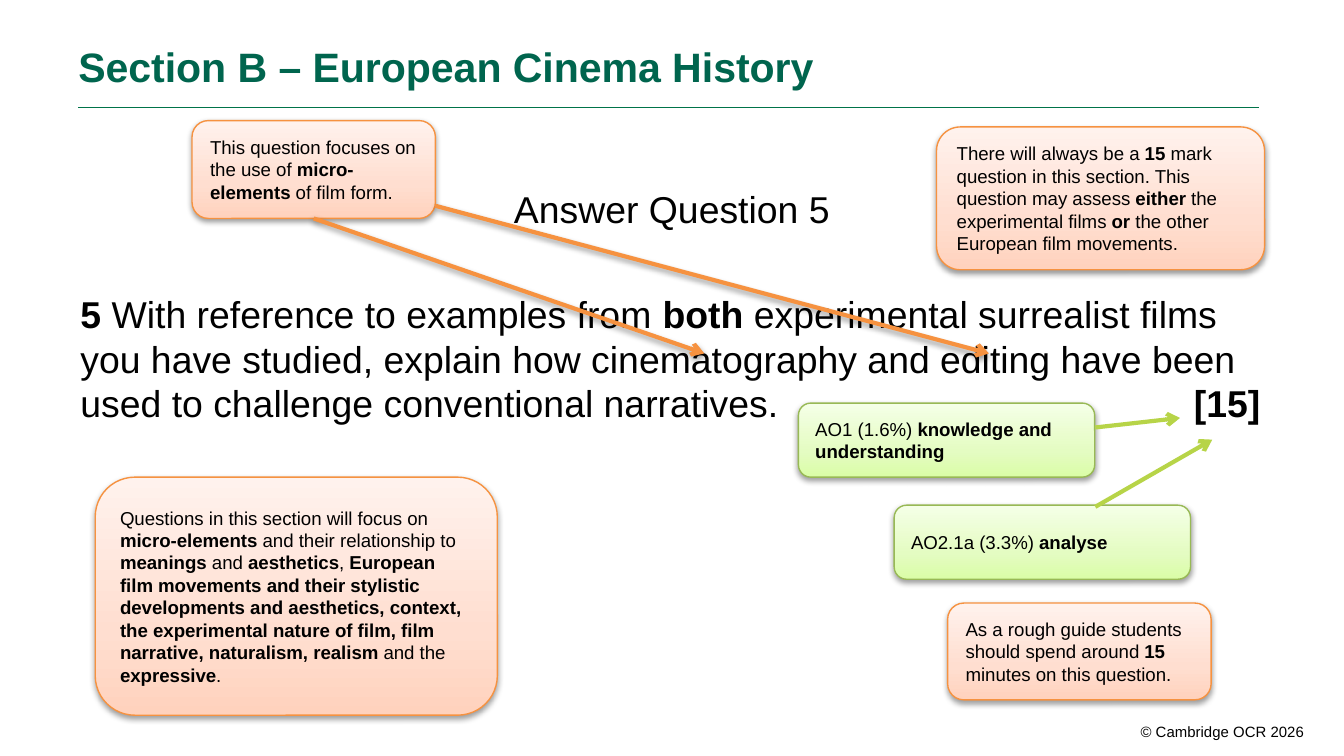
from copy import deepcopy

from lxml.etree import SubElement
from pptx import Presentation
from pptx.dml.color import RGBColor
from pptx.enum.shapes import MSO_CONNECTOR, MSO_SHAPE
from pptx.enum.text import MSO_ANCHOR, PP_ALIGN
from pptx.oxml import parse_xml
from pptx.oxml.ns import nsdecls, qn
from pptx.util import Cm, Pt

BLACK = RGBColor(0x00, 0x00, 0x00)
TITLE_GREEN = RGBColor(0x00, 0x65, 0x4E)
RULE_GREEN = RGBColor(0x00, 0x73, 0x49)
ORANGE = RGBColor(0xF6, 0x92, 0x40)
GREEN = RGBColor(0x98, 0xB9, 0x55)
LIME = RGBColor(0xB7, 0xD4, 0x48)
ORANGE_STOPS = [RGBColor(0xFF, 0xD2, 0xBD), RGBColor(0xFF, 0xDE, 0xD0), RGBColor(0xFF, 0xF2, 0xED)]
GREEN_STOPS = [RGBColor(0xDA, 0xFD, 0xA7), RGBColor(0xE4, 0xFC, 0xC2), RGBColor(0xF5, 0xFF, 0xE7)]
SHADOW = (
    f'<a:effectLst {nsdecls("a")}>'
    '<a:outerShdw blurRad="40000" dist="20000" dir="5400000" rotWithShape="0">'
    '<a:srgbClr val="000000"><a:alpha val="38000"/></a:srgbClr>'
    '</a:outerShdw></a:effectLst>'
)


def write(paragraph, marked_text, size, color=BLACK, alignment=PP_ALIGN.LEFT):
    paragraph.alignment = alignment
    for index, part in enumerate(marked_text.split("**")):
        if part:
            run = paragraph.add_run()
            run.text = part
            run.font.name = "Arial"
            run.font.size = Pt(size)
            run.font.bold = index % 2 == 1
            run.font.color.rgb = color


def add_line(start, end, color, width):
    connector = slide.shapes.add_connector(
        MSO_CONNECTOR.STRAIGHT, *[Cm(value) for value in start + end]
    )
    connector.line.color.rgb = color
    connector.line.width = Pt(width)
    return connector


presentation = Presentation()
presentation.slide_width = Cm(25.4)
presentation.slide_height = Cm(14.29)
slide = presentation.slides.add_slide(presentation.slide_layouts[6])

rule = add_line((1.48, 2.04), (23.79, 2.04), RULE_GREEN, 0.5)
SubElement(rule._element.spPr, qn("a:effectLst"))

footer = slide.shapes.add_textbox(Cm(20.1), Cm(13.53), Cm(4.8), Cm(0.61))
footer.text_frame.word_wrap = True
write(footer.text_frame.paragraphs[0], "© Cambridge OCR 2026", 8, alignment=PP_ALIGN.RIGHT)

title = slide.shapes.add_textbox(Cm(1.48), Cm(0.79), Cm(22.31), Cm(0.94))
title_frame = title.text_frame
title_frame.word_wrap = True
title_frame.margin_left = title_frame.margin_right = 0
title_frame.margin_top = title_frame.margin_bottom = 0
write(title_frame.paragraphs[0], "**Section B – European Cinema History**", 22, TITLE_GREEN)

question = slide.shapes.add_textbox(Cm(1.27), Cm(3.4), Cm(22.86), Cm(11.89))
question.text_frame.word_wrap = True
write(question.text_frame.paragraphs[0], "Answer Question 5", 20, alignment=PP_ALIGN.CENTER)
paragraph = question.text_frame.add_paragraph()
paragraph.space_before = Pt(32)
tabs = SubElement(paragraph._p.get_or_add_pPr(), qn("a:tabLst"))
SubElement(tabs, qn("a:tab"), pos=str(Cm(22.3)), algn="r")
write(
    paragraph,
    "**5 **With reference to examples from **both** experimental surrealist films "
    "you have studied, explain how cinematography and editing have been used to "
    "challenge conventional narratives.\t**[15]**",
    20,
)

callouts = [
    (3.63, 2.28, 4.6, 1.85, ORANGE, ORANGE_STOPS,
     "This question focuses on the use of **micro-elements** of film form."),
    (17.7, 2.4, 6.2, 2.7, ORANGE, ORANGE_STOPS,
     "There will always be a **15** mark question in this section. This question may assess "
     "**either** the experimental films **or** the other European film movements."),
    (15.09, 7.62, 5.6, 1.4, GREEN, GREEN_STOPS,
     "AO1 (1.6%) **knowledge and understanding**"),
    (16.9, 9.55, 5.6, 1.4, GREEN, GREEN_STOPS,
     "AO2.1a (3.3%) **analyse**"),
    (1.8, 9.02, 7.6, 4.5, ORANGE, ORANGE_STOPS,
     "Questions in this section will focus on **micro-elements** and their relationship to "
     "**meanings** and **aesthetics**, **European film movements and their stylistic "
     "developments and aesthetics, context, the experimental nature of film, film narrative, "
     "naturalism, realism **and the **expressive**."),
    (17.91, 11.4, 4.98, 1.83, ORANGE, ORANGE_STOPS,
     "As a rough guide students should spend around **15** minutes on this question."),
]
boxes = []
for left, top, width, height, outline, colors, text in callouts:
    box = slide.shapes.add_shape(
        MSO_SHAPE.ROUNDED_RECTANGLE, Cm(left), Cm(top), Cm(width), Cm(height)
    )
    box.fill.gradient()
    box.fill.gradient_angle = 90
    stop_list = box._element.spPr.find(".//" + qn("a:gsLst"))
    stop_list.insert(1, deepcopy(stop_list[0]))
    for stop, position, color in zip(box.fill.gradient_stops, (0, 0.35, 1), colors):
        stop.position = position
        stop.color.rgb = color
    box.line.color.rgb = outline
    box.line.width = Pt(0.75)
    box._element.spPr.append(parse_xml(SHADOW))
    box.text_frame.word_wrap = True
    box.text_frame.vertical_anchor = MSO_ANCHOR.MIDDLE
    write(box.text_frame.paragraphs[0], text, 10)
    boxes.append(box)

arrows = [
    ((8.23, 3.89), (18.69, 6.68), ORANGE, None),
    ((5.93, 4.13), (13.31, 6.68), ORANGE, boxes[0]),
    ((20.7, 8.08), (22.3, 7.9), LIME, None),
    ((20.7, 9.58), (22.91, 8.31), LIME, None),
]
for start, end, color, source_box in arrows:
    arrow = add_line(start, end, color, 2.25)
    SubElement(arrow.line._get_or_add_ln(), qn("a:tailEnd"), type="arrow")
    if color == ORANGE:
        arrow._element.spPr.append(parse_xml(SHADOW))
    else:
        SubElement(arrow._element.spPr, qn("a:effectLst"))
    if source_box is not None:
        arrow.begin_connect(source_box, 2)

presentation.save("out.pptx")
